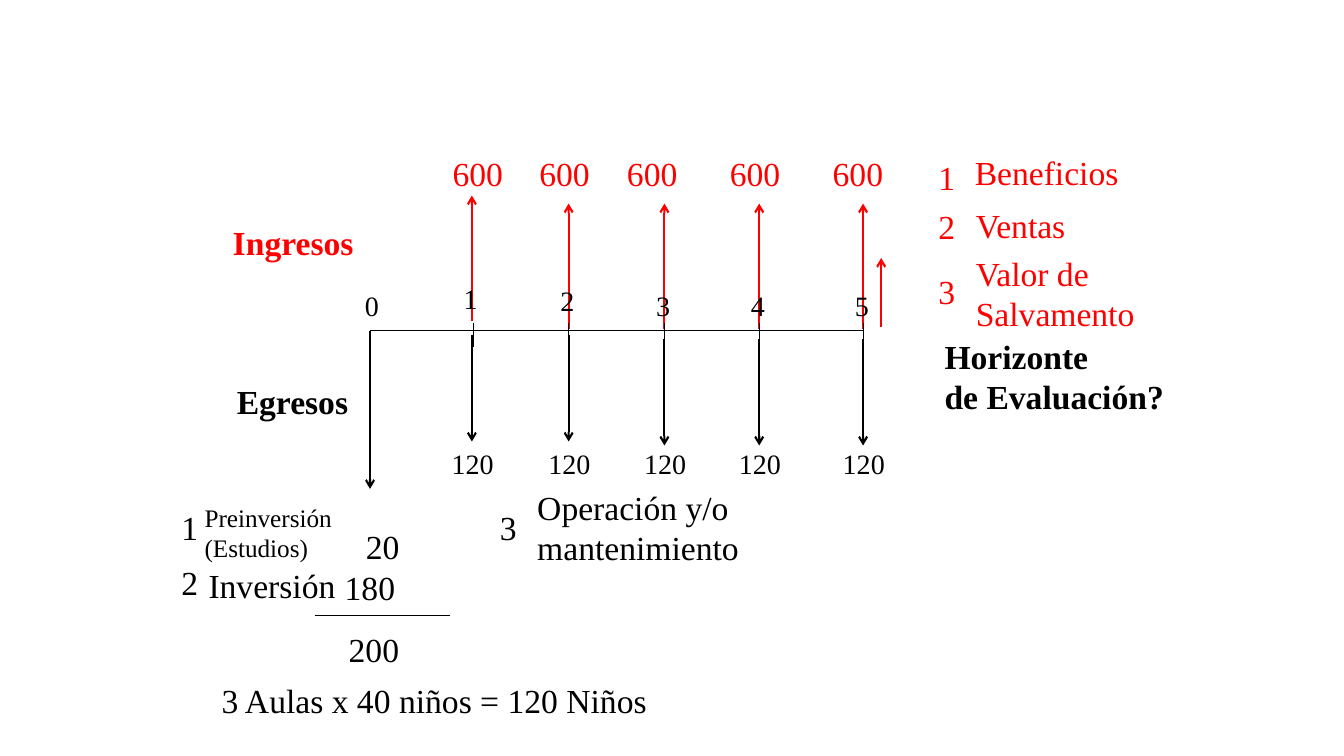
from lxml import etree
from pptx import Presentation
from pptx.dml.color import RGBColor
from pptx.enum.shapes import MSO_CONNECTOR as Connector
from pptx.enum.text import MSO_AUTO_SIZE as AutoSize
from pptx.oxml.ns import qn
from pptx.util import Inches, Pt

RED = RGBColor(0xFF, 0x00, 0x00)
BLACK = RGBColor(0x00, 0x00, 0x00)


class CashFlowSlide:
    """Draws labels, lines and arrows in one style on the current slide."""

    font_name = "Times New Roman"

    def __init__(self, slide):
        self.slide = slide

    def label(self, lines, left, top, width, height=0.5, size=24, color=BLACK, bold=False):
        box = self.slide.shapes.add_textbox(
            Inches(left), Inches(top), Inches(width), Inches(height))
        frame = box.text_frame
        frame.word_wrap = False
        frame.auto_size = AutoSize.SHAPE_TO_FIT_TEXT
        for index, line in enumerate(lines):
            paragraph = frame.add_paragraph() if index else frame.paragraphs[0]
            run = paragraph.add_run()
            run.text = line
            run.font.name = self.font_name
            run.font.size = Pt(size)
            run.font.bold = bold
            run.font.color.rgb = color

    def line(self, x1, y1, x2, y2, color=BLACK, weight=0.75):
        connector = self.slide.shapes.add_connector(
            Connector.STRAIGHT, Inches(x1), Inches(y1), Inches(x2), Inches(y2))
        connector.line.color.rgb = color
        connector.line.width = Pt(weight)
        etree.SubElement(connector._element.spPr, qn("a:effectLst"))
        return connector

    def arrow(self, x, start, end, color=BLACK):
        connector = self.line(x, start, x, end, color, 1.5)
        outline = connector.line._get_or_add_ln()
        etree.SubElement(outline, qn("a:tailEnd"), type="arrow")


def draw_timeline(board):
    axis_start, axis_end, axis_y = 3.67, 8.56, 3.28
    board.line(axis_start, axis_y, axis_end, axis_y)
    board.arrow(axis_start, axis_y, 4.85)
    board.label(["0"], 3.52, 2.81, 0.34, 0.44, size=20)

    years = [
        (4.68, 4.70, 3.18, 3.32, 2.74, 4.39),
        (5.64, 5.64, 3.26, 3.32, 2.76, 5.25),
        (6.59, 6.59, 3.26, 3.36, 2.81, 6.12),
        (7.53, 7.53, 3.26, 3.36, 2.81, 7.14),
        (8.56, 8.56, 3.26, 3.36, 2.81, 8.16),
    ]
    for year, (x, tick_x, income_y, cost_y, year_top, income_left) in enumerate(years, 1):
        board.arrow(x, income_y, income_y - 1.24, RED)
        board.line(tick_x, 3.2, tick_x, 3.44)
        board.arrow(x, cost_y, cost_y + 1.06)
        board.label([str(year)], x - 0.18, year_top, 0.34, 0.44, size=20)
        board.label(["120"], x - 0.3, 4.38, 0.62, 0.44, size=20)
        board.label(["600"], income_left, 1.47, 0.71, color=RED)
    board.arrow(8.74, 3.24, 2.56, RED)


def draw_income(board):
    board.label(["Ingresos"], 2.21, 2.15, 1.41, color=RED, bold=True)
    items = [
        (["Beneficios"], 9.57, 1.46, 1.64, 0.51, 1.51),
        (["Ventas"], 9.58, 1.98, 1.1, 0.51, 1.99),
        (["Valor de", "Salvamento"], 9.58, 2.46, 1.79, 0.91, 2.64),
    ]
    for number, (lines, left, top, width, height, number_top) in enumerate(items, 1):
        board.label([str(number)], 9.21, number_top, 0.37, color=RED)
        board.label(lines, left, top, width, height, color=RED)
    board.label(["Horizonte", "de Evaluación?"], 9.27, 3.28, 2.4, 0.91, bold=True)


def draw_costs(board):
    board.label(["Egresos"], 2.25, 3.73, 1.32, bold=True)
    for number, left, top in (("1", 1.7, 4.98), ("2", 1.7, 5.53), ("3", 4.86, 4.98)):
        board.label([number], left, top, 0.37)
    board.label(["Preinversión", "(Estudios)"], 1.93, 4.93, 1.48, 0.71, size=18)
    board.label(["Inversión"], 1.97, 5.56, 1.47)
    board.label(["Operación y/o", "mantenimiento"], 5.23, 4.78, 2.22, 0.91)
    board.label(["20"], 3.53, 5.17, 0.54)
    board.label(["180"], 3.32, 5.58, 0.71)
    board.line(3.12, 6.11, 4.46, 6.11)
    board.label(["200"], 3.36, 6.19, 0.71)
    board.label(["3 Aulas x 40 niños = 120 Niños"], 2.1, 6.7, 4.46)


def main():
    presentation = Presentation()
    presentation.slide_width = Inches(13.33)
    presentation.slide_height = Inches(7.5)
    board = CashFlowSlide(presentation.slides.add_slide(presentation.slide_layouts[6]))
    draw_timeline(board)
    draw_income(board)
    draw_costs(board)
    presentation.save("out.pptx")


if __name__ == "__main__":
    main()
